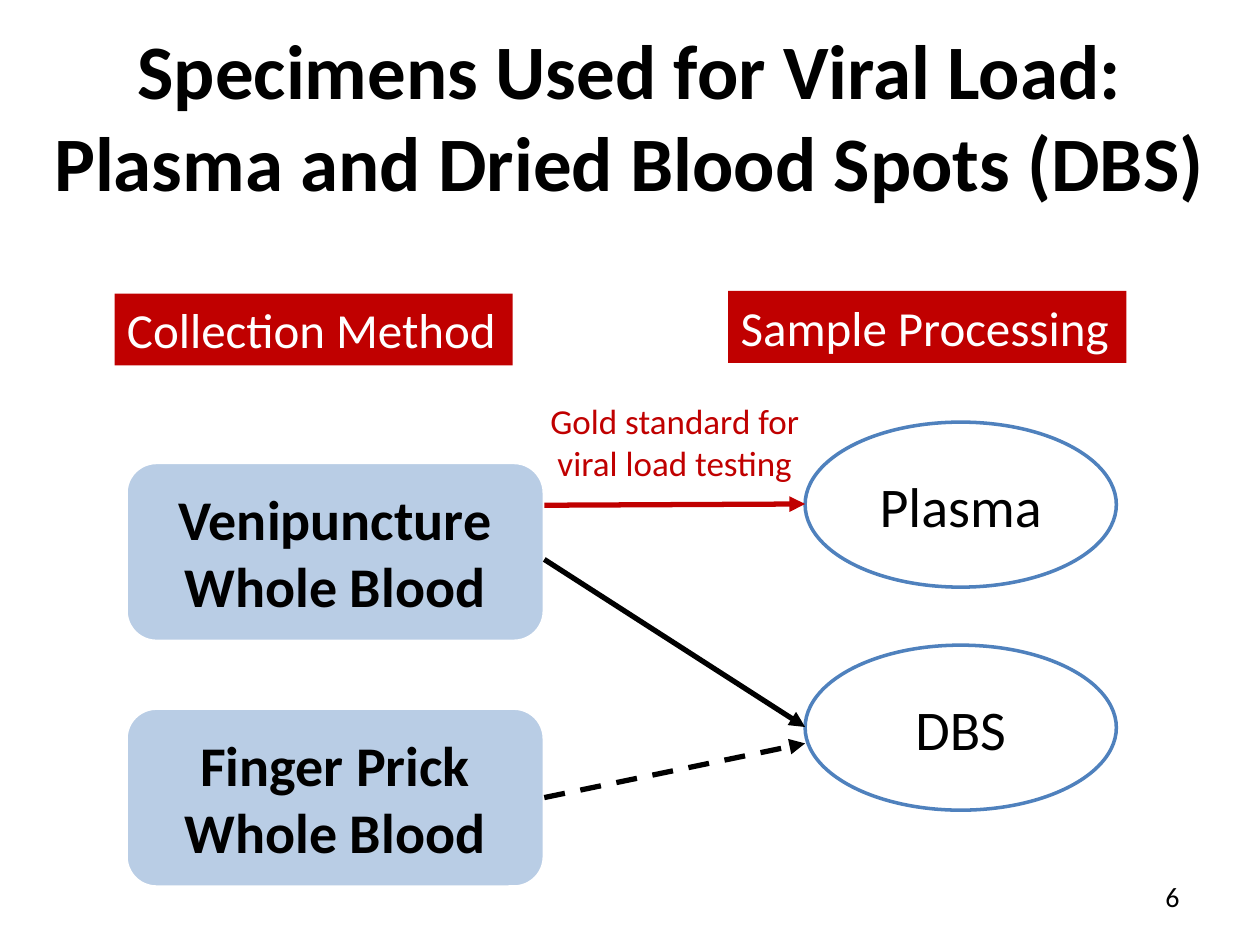
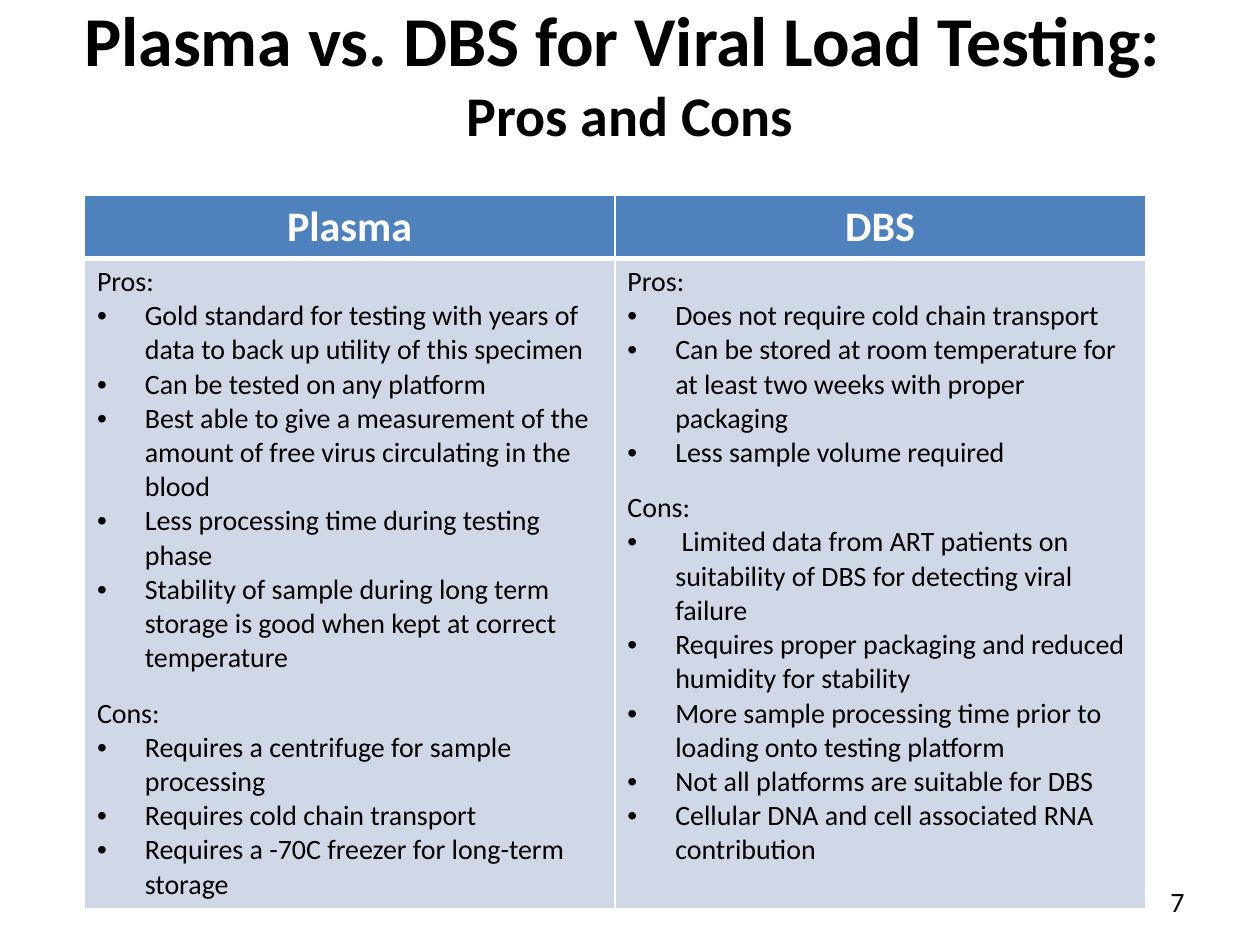
import pptx
import pptx.util
import pptx.dml.color
import pptx.enum.dml
import pptx.enum.shapes
import pptx.enum.text
import pptx.oxml
import pptx.oxml.ns
from lxml import etree
from pptx.util import Inches

THEME = {
    "font": "Calibri",
    "black": "000000", "white": "FFFFFF", "red": "C00000", "blue": "4F81BD",
    "box": "B9CDE5", "cell": "D0D8E8",
    "title": 44, "long_title": 40, "subtitle": 32, "node": 32, "label": 28,
    "header": 24, "note": 20, "body": 16,
}
SHAPES = pptx.enum.shapes.MSO_SHAPE
ALIGN = pptx.enum.text.PP_ALIGN
MIDDLE = pptx.enum.text.MSO_ANCHOR.MIDDLE
TOP = pptx.enum.text.MSO_ANCHOR.TOP


def rgb(name):
    return pptx.dml.color.RGBColor.from_string(THEME[name])


def write(frame, text, size, color="black", bold=False, align=ALIGN.CENTER, anchor=MIDDLE):
    """Fill a text frame and give all of its runs one style."""
    frame.text = text
    frame.word_wrap = True
    frame.vertical_anchor = anchor
    for paragraph in frame.paragraphs:
        paragraph.alignment = align
        for run in paragraph.runs:
            run.font.name = THEME["font"]
            run.font.size = pptx.util.Pt(THEME[size])
            run.font.bold = bold
            run.font.color.rgb = rgb(color)


deck = pptx.Presentation()
deck.slide_width, deck.slide_height = Inches(10), Inches(7.5)

# Title and page number on each slide
pages = [
    ("Specimens Used for Viral Load: Plasma and Dried Blood Spots (DBS)",
     "title", 0.3, 1.22, "6", 7.13, 6.91),
    ("Plasma vs. DBS for Viral Load Testing: \vPros and Cons",
     "long_title", 0, 1.15, "7", 7.17, 6.95),
]
for heading, size, top, height, number, number_left, number_top in pages:
    slide = deck.slides.add_slide(deck.slide_layouts[6])
    title = slide.shapes.add_textbox(Inches(0.04), Inches(top), Inches(9.92), Inches(height))
    write(title.text_frame, heading, size, bold=True)
    for subtitle in title.text_frame.paragraphs[0].runs[1:]:
        subtitle.font.size = pptx.util.Pt(THEME["subtitle"])
    page_number = slide.shapes.add_textbox(
        Inches(number_left), Inches(number_top), Inches(2.33), Inches(0.4))
    write(page_number.text_frame, number, "body", align=ALIGN.RIGHT)
specimens, comparison = deck.slides

# Column labels, collection methods and processed samples
nodes = {}
for text, kind, left, top, width, height, fill, line in [
    ("Collection Method", "label", 0.91, 2.33, 3.16, 0.57, "red", None),
    ("Sample Processing", "label", 5.78, 2.31, 3.16, 0.57, "red", None),
    ("Venipuncture Whole Blood", "method", 1, 3.67, 3.32, 1.42, "box", "white"),
    ("Finger Prick Whole Blood", "method", 1, 5.62, 3.32, 1.42, "box", "white"),
    ("Plasma", "sample", 6.39, 3.35, 2.47, 1.31, "white", "blue"),
    ("DBS", "sample", 6.39, 5.12, 2.47, 1.31, "white", "blue"),
]:
    outline = {"label": SHAPES.RECTANGLE, "method": SHAPES.ROUNDED_RECTANGLE,
               "sample": SHAPES.OVAL}[kind]
    node = specimens.shapes.add_shape(
        outline, Inches(left), Inches(top), Inches(width), Inches(height))
    node.shadow.inherit = False
    node.fill.solid()
    node.fill.fore_color.rgb = rgb(fill)
    if line:
        node.line.color.rgb = rgb(line)
        node.line.width = pptx.util.Pt(2)
    else:
        node.line.fill.background()
    frame = node.text_frame
    if kind == "label":
        write(frame, text, "label", "white", align=ALIGN.LEFT, anchor=TOP)
        frame.word_wrap = False
    else:
        write(frame, text, "node", bold=kind == "method")
    if kind == "method":
        node.adjustments[0] = 0.17
        frame.margin_left = frame.margin_right = Inches(0.2)
        frame.margin_top = frame.margin_bottom = Inches(0.14)
    nodes[text] = node

# Arrows from collection method to sample
for start_y, end_y, color, dashed, source in [
    (4.01, 4, "red", False, None),
    (4.44, 5.77, "black", False, None),
    (6.33, 5.9, "black", True, "Finger Prick Whole Blood"),
]:
    arrow = specimens.shapes.add_connector(
        pptx.enum.shapes.MSO_CONNECTOR.STRAIGHT,
        Inches(4.32), Inches(start_y), Inches(6.39), Inches(end_y))
    if source:
        arrow.begin_connect(nodes[source], 3)
    arrow.line.color.rgb = rgb(color)
    arrow.line.width = pptx.util.Pt(3)
    if dashed:
        arrow.line.dash_style = pptx.enum.dml.MSO_LINE.DASH
    properties = arrow.element.spPr
    head = etree.SubElement(properties.find(pptx.oxml.ns.qn("a:ln")),
                            pptx.oxml.ns.qn("a:tailEnd"))
    head.set("type", "triangle")
    etree.SubElement(properties, pptx.oxml.ns.qn("a:effectLst"))

gold_standard = specimens.shapes.add_textbox(
    Inches(4.07), Inches(3.12), Inches(2.57), Inches(0.77))
write(gold_standard.text_frame, "Gold standard for viral load testing", "note", "red", anchor=TOP)

# Pros and cons table
arguments = {
    "Plasma": [
        "Pros:",
        "Gold standard for testing with years of data to back up utility of this specimen",
        "Can be tested on any platform",
        "Best able to give a measurement of the amount of free virus circulating in the blood",
        "Less processing time during testing phase",
        "Stability of sample during long term storage is good when kept at correct temperature",
        "Cons:",
        "Requires a centrifuge for sample processing",
        "Requires cold chain transport",
        "Requires a -70C freezer for long-term storage",
    ],
    "DBS": [
        "Pros:",
        "Does not require cold chain transport",
        "Can be stored at room temperature for at least two weeks with proper packaging",
        "Less sample volume required",
        "Cons:",
        " Limited data from ART patients on suitability of DBS for detecting viral failure",
        "Requires proper packaging and reduced humidity for stability",
        "More sample processing time prior to loading onto testing platform",
        "Not all platforms are suitable for DBS",
        "Cellular DNA and cell associated RNA contribution",
    ],
}
table = comparison.shapes.add_table(
    2, len(arguments), Inches(0.67), Inches(1.55), Inches(8.42), Inches(5.66)).table
table.rows[0].height, table.rows[1].height = Inches(0.5), Inches(5.16)

for column, (specimen, points) in enumerate(arguments.items()):
    table.columns[column].width = Inches(4.21)
    header, body = table.cell(0, column), table.cell(1, column)
    write(header.text_frame, specimen, "header", "white", bold=True, anchor=TOP)
    write(body.text_frame, "\n".join(points), "body", align=ALIGN.LEFT, anchor=TOP)

    # Bullets under the two headings
    for paragraph in body.text_frame.paragraphs:
        if paragraph.text == "Cons:":
            paragraph.space_before = pptx.util.Pt(12)
        elif paragraph.text != "Pros:":
            properties = paragraph._p.get_or_add_pPr()
            properties.set("marL", str(Inches(0.38)))
            properties.set("indent", str(-Inches(0.38)))
            for tag, name, value in [("a:buFont", "typeface", "Arial"),
                                     ("a:buChar", "char", "•")]:
                etree.SubElement(properties, pptx.oxml.ns.qn(tag)).set(name, value)

    # Fills and white rules, thicker between header and body
    for cell, fill, thick in [(header, "blue", "lnB"), (body, "cell", "lnT")]:
        cell.fill.solid()
        cell.fill.fore_color.rgb = rgb(fill)
        for place, side in enumerate(["lnL", "lnR", "lnT", "lnB"]):
            width = pptx.util.Pt(3 if side == thick else 1)
            cell._tc.get_or_add_tcPr().insert(place, pptx.oxml.parse_xml(
                f'<a:{side} {pptx.oxml.ns.nsdecls("a")} w="{width}"><a:solidFill>'
                f'<a:srgbClr val="{THEME["white"]}"/></a:solidFill></a:{side}>'))

deck.save("out.pptx")
